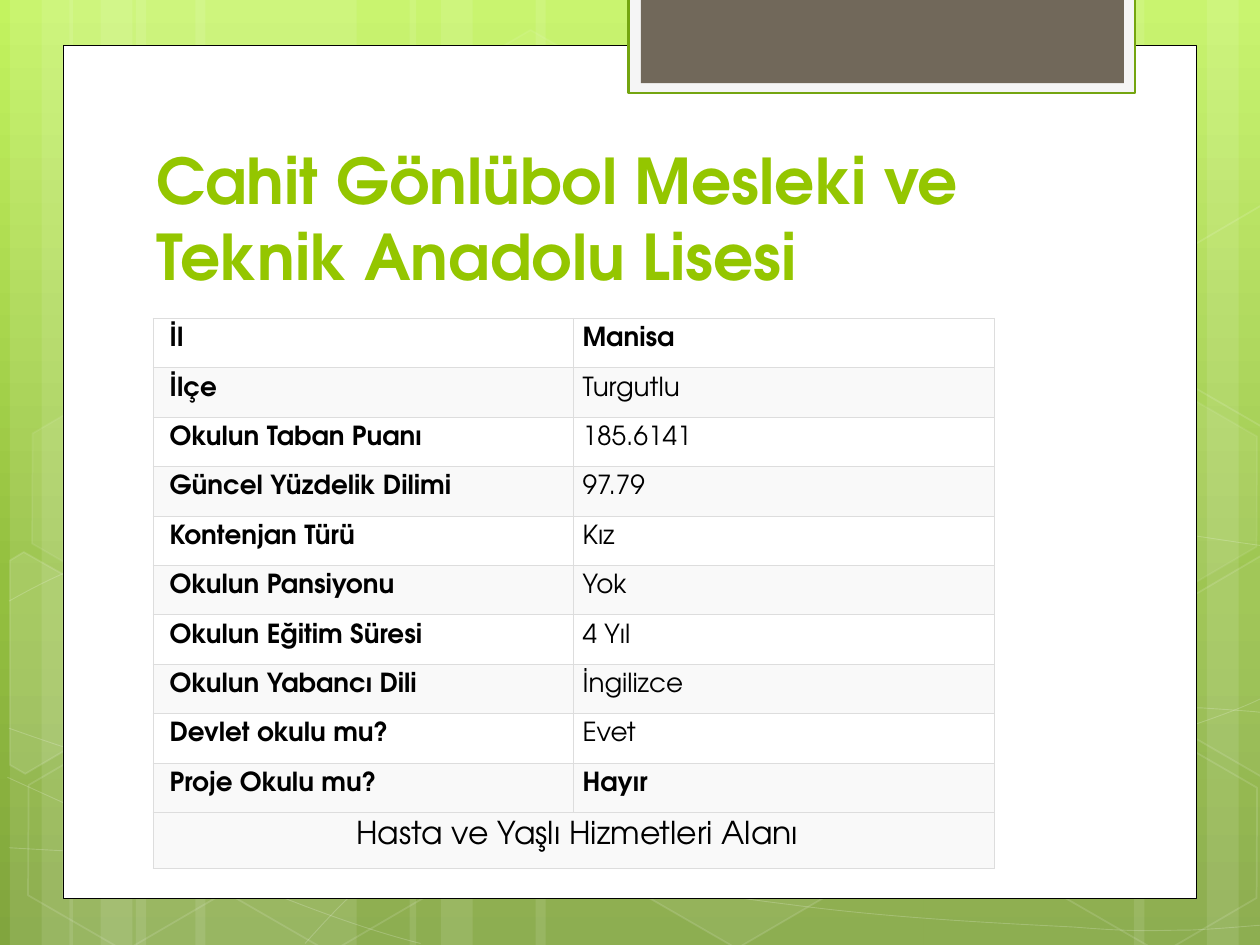
from copy import deepcopy
from dataclasses import dataclass
from typing import NamedTuple

from lxml.etree import SubElement
from pptx import Presentation
from pptx.dml.color import RGBColor
from pptx.enum.shapes import MSO_SHAPE
from pptx.enum.text import MSO_ANCHOR, PP_ALIGN
from pptx.oxml.ns import qn
from pptx.util import Cm, Pt


@dataclass(frozen=True)
class Theme:
    font: str = "TeX Gyre Adventor"
    white: str = "FFFFFF"
    black: str = "000000"
    green: str = "94C600"
    frame_fill: str = "F5F5F5"
    frame_line: str = "74A510"
    brown: str = "71685A"
    stripe: str = "F9F9F9"
    grid: str = "DDDDDD"
    backdrop: tuple = ((0, "C3F35F"), (0.62, "93BF3F"), (1, "81A53E"))
    title_size: int = 36
    cell_size: int = 15
    footer_size: int = 18


class Panel(NamedTuple):
    left: float
    top: float
    width: float
    height: float
    fill: str
    line: str | None = None
    weight: float = 0


class Hexagon(NamedTuple):
    left: float
    top: float
    fill_opacity: int
    line_opacity: int


class CutHexagon(NamedTuple):
    points: list
    fill_opacity: int


class Row(NamedTuple):
    label: str
    value: str
    bold: bool = False


THEME = Theme()
PAGE_WIDTH, PAGE_HEIGHT = 25.4, 19.05

BANDS = [(2.74, 4.45), (0.2, 1.27), (0.84, 2.11), (3.94, 4.45), (1.4, 1.27), (2.03, 2.11),
         (18.62, 4.45), (24.33, 1.27), (22.86, 2.11), (10.8, 7.82), (8.26, 1.27), (8.89, 2.11)]

WAVES = [
    [(0.18, 17.09), (1.55, 17.17), (2.92, 17.25), (4.83, 17.22), (6.73, 17.2), (9.09, 17.15),
     (11.63, 16.89), (14.17, 16.64), (17.78, 16.15), (20.12, 15.67), (22.43, 15.19),
     (24.82, 14.43), (25.58, 14)],
    [(0.18, 12.12), (0.91, 11.71), (1.65, 11.33), (3.07, 10.95), (4.52, 10.57), (6.58, 10.01),
     (8.81, 9.83), (11.07, 9.65), (13.82, 9.63), (16.61, 9.83), (19.41, 10.03),
     (24.05, 10.82), (25.58, 11.02)],
    [(0.15, 15.67), (3.23, 17.07), (6.27, 18.47), (8.48, 19.02)],
    [(0.18, 14.68), (0.97, 14.96), (1.78, 15.24), (3.25, 15.65), (4.72, 16.03), (6.93, 16.66),
     (9.07, 17.09), (11.18, 17.53), (13.84, 17.98), (15.95, 18.24), (18.06, 18.52),
     (20.32, 18.62), (21.67, 18.69), (22.99, 18.8), (23.34, 18.75), (24, 18.75),
     (24.66, 18.72), (25.12, 18.67), (25.58, 18.64)],
    [(6.15, 19.02), (6.6, 18.52), (7.06, 18.01), (7.67, 17.55), (8.28, 17.09), (9.14, 16.59),
     (9.86, 16.23), (10.57, 15.88), (11, 15.72), (11.94, 15.47), (12.85, 15.21),
     (14.55, 14.86), (15.44, 14.68), (16.36, 14.5), (16.48, 14.5), (17.27, 14.45),
     (18.06, 14.38), (19.3, 14.3), (20.17, 14.27), (21.06, 14.25), (22.5, 14.27),
     (22.5, 14.27), (23.07, 14.27), (23.64, 14.27), (24.21, 14.27), (24.66, 14.3),
     (25.1, 14.33), (25.32, 14.35), (25.55, 14.38), (25.48, 14.35), (25.55, 14.38)],
]

HEXAGONS = [Hexagon(8.48, 0.91, 4, 8), Hexagon(12.62, 14.96, 6, 12), Hexagon(0.28, 15.01, 0, 12),
            Hexagon(0.36, 7.92, 7, 8), Hexagon(4.42, 15.04, 0, 12), Hexagon(19.13, 11.51, 10, 12),
            Hexagon(21.18, 15.06, 0, 12), Hexagon(21.18, 7.98, 7, 8)]

CUT_HEXAGONS = [
    CutHexagon([(0.2, 11.3), (0.48, 11.13), (2.44, 12.24), (2.41, 14.48), (0.51, 15.6),
                (0.2, 15.42)], 10),
    CutHexagon([(23.52, 12.32), (25.43, 11.2), (25.63, 11.33), (25.63, 15.57), (25.45, 15.67),
                (23.52, 14.55)], 4),
    CutHexagon([(23.52, 5.26), (25.43, 4.14), (25.65, 4.27), (25.63, 8.51), (25.45, 8.61),
                (23.52, 7.49)], 0),
]

PANELS = [Panel(1.27, 0.91, 22.86, 17.2, THEME.white, THEME.black, 0.5),
          Panel(12.67, -0.05, 10.21, 1.93, THEME.frame_fill, THEME.frame_line, 1.25),
          Panel(12.92, -0.05, 9.74, 1.73, THEME.brown)]

TITLE = "Cahit Gönlübol Mesleki ve Teknik Anadolu Lisesi"
FOOTER = "Hasta ve Yaşlı Hizmetleri Alanı"
ROWS = [Row("İl", "Manisa", True), Row("İlçe", "Turgutlu"), Row("Okulun Taban Puanı", "185.6141"),
        Row("Güncel Yüzdelik Dilimi", "97.79"), Row("Kontenjan Türü", "Kız"),
        Row("Okulun Pansiyonu", "Yok"), Row("Okulun Eğitim Süresi", "4 Yıl"),
        Row("Okulun Yabancı Dili", "İngilizce"), Row("Devlet okulu mu?", "Evet"),
        Row("Proje Okulu mu?", "Hayır", True)]


def apply(target, values: dict) -> None:
    for name, value in values.items():
        setattr(target, name, value)


def paint(fill, color: str | None, opacity: int = 100) -> None:
    if color is None or opacity == 0:
        fill.background()
        return
    fill.solid()
    fill.fore_color.rgb = RGBColor.from_string(color)
    if opacity < 100:
        node = fill._xPr.find(qn("a:solidFill"))[0]
        SubElement(node, qn("a:alpha"), val=str(opacity * 1000))


def style(shape, fill: str | None, fill_opacity: int = 100, line: str | None = None,
          weight: float = 1, line_opacity: int = 100) -> None:
    shape.shadow.inherit = False
    paint(shape.fill, fill, fill_opacity)
    paint(shape.line.fill, line, line_opacity)
    if line:
        shape.line.width = Pt(weight)


def draw_backdrop(page) -> None:
    fill = page.background.fill
    fill.gradient()
    fill.gradient_angle = 270
    stop_list = next(page._element.iter(qn("a:gsLst")))
    stop_list.append(deepcopy(stop_list[0]))
    for stop, (position, color) in zip(fill.gradient_stops, THEME.backdrop):
        stop.position = position
        stop.color.rgb = RGBColor.from_string(color)


def draw_outline(page, points: list, closed: bool):
    start, *rest = [(Cm(x), Cm(y)) for x, y in points]
    builder = page.shapes.build_freeform(*start)
    builder.add_line_segments(rest, close=closed)
    return builder.convert_to_shape()


def draw_wave(page, knots: list) -> None:
    shape = draw_outline(page, knots, False)
    outline = next(shape._element.iter(qn("a:pathLst")))[0]
    segments = outline.findall(qn("a:lnTo"))
    for first in range(0, len(segments), 3):
        curve = SubElement(outline, qn("a:cubicBezTo"))
        for segment in segments[first:first + 3]:
            curve.append(segment[0])
            outline.remove(segment)
    style(shape, None, 0, THEME.white, 0.5, 20)


def draw_hexagon(page, item: Hexagon) -> None:
    shape = page.shapes.add_shape(MSO_SHAPE.HEXAGON, Cm(item.left), Cm(item.top), Cm(4.45), Cm(3.86))
    shape.rotation = 30
    shape.adjustments[0] = 0.285
    style(shape, THEME.white, item.fill_opacity, THEME.white, 1, item.line_opacity)


def draw_panel(page, item: Panel, opacity: int = 100) -> None:
    shape = page.shapes.add_shape(MSO_SHAPE.RECTANGLE, *map(Cm, item[:4]))
    style(shape, item.fill, opacity, item.line, item.weight)


def write(frame, text: str, size: int, color: str, bold: bool, align=PP_ALIGN.LEFT) -> None:
    para = frame.paragraphs[0]
    para.alignment = align
    span = para.add_run()
    span.text = text
    apply(span.font, {"name": THEME.font, "size": Pt(size), "bold": bold})
    span.font.color.rgb = RGBColor.from_string(color)


def format_cell(cell, indent: float, fill: str | None) -> None:
    apply(cell, {"margin_left": Cm(indent), "margin_right": Cm(0.18), "margin_top": Cm(0.18),
                 "margin_bottom": Cm(0.18), "vertical_anchor": MSO_ANCHOR.TOP})
    for side in ("lnL", "lnR", "lnT", "lnB"):
        border = SubElement(cell._tc.get_or_add_tcPr(), qn(f"a:{side}"), w=str(Pt(0.75)))
        SubElement(SubElement(border, qn("a:solidFill")), qn("a:srgbClr"), val=THEME.grid)
    paint(cell.fill, fill)


def draw_table(page) -> None:
    count = len(ROWS) + 1
    table = page.shapes.add_table(count, 2, Cm(3.09), Cm(6.42), Cm(16.95), Cm(10.71)).table
    apply(table, {"first_row": False, "horz_banding": False})
    for index in range(count):
        fill = THEME.stripe if index % 2 or index == count - 1 else None
        for column, indent in enumerate((0.33, 0.18)):
            format_cell(table.cell(index, column), indent, fill)
    for index, row in enumerate(ROWS):
        for column, (text, bold) in enumerate(((row.label, True), (row.value, row.bold))):
            write(table.cell(index, column).text_frame, text, THEME.cell_size, THEME.black, bold)
    footer = table.cell(count - 1, 0)
    footer.merge(table.cell(count - 1, 1))
    write(footer.text_frame, FOOTER, THEME.footer_size, THEME.black, False, PP_ALIGN.CENTER)


def main() -> None:
    deck = Presentation()
    apply(deck, {"slide_width": Cm(PAGE_WIDTH), "slide_height": Cm(PAGE_HEIGHT)})
    page = deck.slides.add_slide(deck.slide_layouts[6])
    draw_backdrop(page)
    for left, width in BANDS:
        draw_panel(page, Panel(left, 0, width, PAGE_HEIGHT, THEME.white), 10)
    for knots in WAVES:
        draw_wave(page, knots)
    for item in HEXAGONS:
        draw_hexagon(page, item)
    for item in CUT_HEXAGONS:
        style(draw_outline(page, item.points, True), THEME.white, item.fill_opacity,
              THEME.white, 1, 12)
    for item in PANELS:
        draw_panel(page, item)
    box = page.shapes.add_textbox(Cm(2.9), Cm(2.85), Cm(19.51), Cm(3.18))
    apply(box.text_frame, {"word_wrap": True, "vertical_anchor": MSO_ANCHOR.BOTTOM})
    write(box.text_frame, TITLE, THEME.title_size, THEME.green, True)
    draw_table(page)
    deck.save("out.pptx")


if __name__ == "__main__":
    main()
